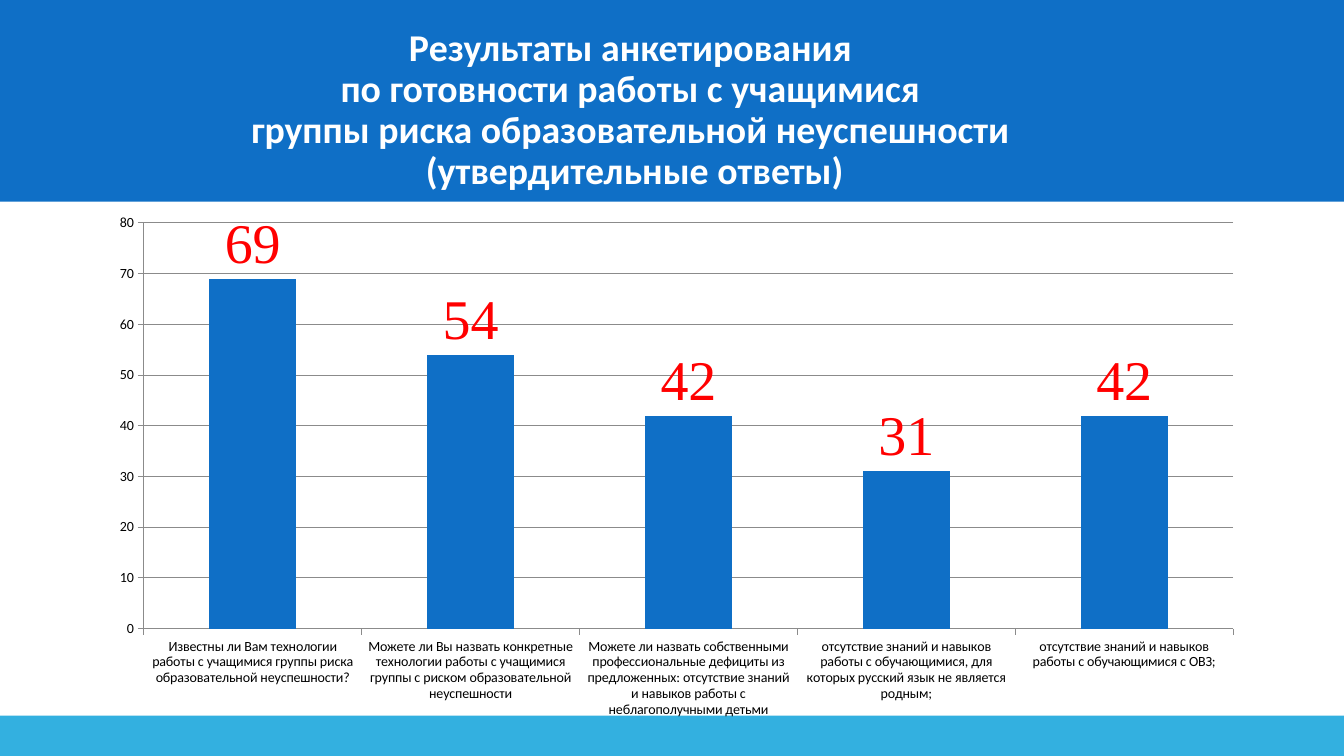
import pptx
import pptx.chart.data
import pptx.dml.color
import pptx.enum.chart
import pptx.enum.shapes
import pptx.enum.text
import pptx.oxml
import pptx.oxml.ns
import pptx.util

PX = 9144  # EMU in one px, 100 px to the inch
BLUE, SKY, GREY = "0F6FC6", "009DD9", "8B8B8B"
WHITE, BLACK, RED = "FFFFFF", "000000", "FF0000"

TITLE = (
    "Результаты анкетирования \v"
    "по готовности работы с учащимися \v"
    "группы риска образовательной неуспешности \v"
    "(утвердительные ответы)"
)
VOTES = {
    "Известны ли Вам технологии работы с учащимися группы риска "
    "образовательной неуспешности?": 69,
    "Можете ли Вы назвать конкретные технологии работы с учащимися "
    "группы с риском образовательной неуспешности": 54,
    "Можете ли назвать собственными профессиональные дефициты из "
    "предложенных: отсутствие знаний и навыков работы с "
    "неблагополучными детьми": 42,
    "отсутствие знаний и навыков работы с обучающимися, для которых "
    "русский язык не является родным;": 31,
    "отсутствие знаний и навыков работы с обучающимися с ОВЗ;": 42,
}


def color(code):
    return pptx.dml.color.RGBColor.from_string(code)


def style(font, size, tint, face="Calibri", bold=False):
    font.size = pptx.util.Pt(size)
    font.name = face
    font.bold = bold
    font.color.rgb = color(tint)


def write(frame, text, space=1.0, **form):
    part = frame.paragraphs[0]
    part.text = text
    part.alignment = pptx.enum.text.PP_ALIGN.CENTER
    part.line_spacing = space
    for run in part.runs:
        style(run.font, **form)


class Page:
    def __init__(self, deck):
        self.slide = deck.slides.add_slide(deck.slide_layouts[6])
        self.shapes = self.slide.shapes

    def band(self, *box, fill, alpha=100):
        kind = pptx.enum.shapes.MSO_SHAPE.RECTANGLE
        band = self.shapes.add_shape(kind, *(n * PX for n in box))
        band.shadow.inherit = False
        band.fill.solid()
        band.fill.fore_color.rgb = color(fill)
        band.line.fill.background()
        if alpha < 100:
            tone = band.fill._xPr.find(".//" + pptx.oxml.ns.qn("a:srgbClr"))
            node = pptx.oxml.parse_xml(
                f'<a:alpha {pptx.oxml.ns.nsdecls("a")} val="{alpha * 1000}"/>'
            )
            tone.append(node)

    def text(self, *box, text, **form):
        frame = self.shapes.add_textbox(*(n * PX for n in box)).text_frame
        frame.word_wrap = True
        frame.vertical_anchor = pptx.enum.text.MSO_ANCHOR.MIDDLE
        write(frame, text, **form)

    def chart(self, *box, data):
        enum = pptx.enum.chart
        feed = pptx.chart.data.CategoryChartData()
        feed.categories = list(data)
        feed.add_series("Series 1", list(data.values()))
        chart = self.shapes.add_chart(
            enum.XL_CHART_TYPE.COLUMN_CLUSTERED, *(n * PX for n in box), feed
        ).chart
        chart.has_legend = False
        chart.has_title = False
        style(chart.font, 10, BLACK)

        # Axes and grid
        for axis in (chart.category_axis, chart.value_axis):
            axis.major_tick_mark = enum.XL_TICK_MARK.OUTSIDE
            axis.format.line.color.rgb = color(GREY)
        scale = chart.value_axis
        scale.minimum_scale, scale.maximum_scale = 0, 80
        scale.major_unit = 10
        scale.has_major_gridlines = True
        scale.major_gridlines.format.line.color.rgb = color(GREY)

        # Bars and their values
        plot = chart.plots[0]
        plot.gap_width = 150
        plot.vary_by_categories = False
        bars = plot.series[0]
        bars.format.fill.solid()
        bars.format.fill.fore_color.rgb = color(BLUE)
        tags = bars.data_labels
        tags.show_value = True
        tags.position = enum.XL_LABEL_POSITION.OUTSIDE_END
        style(tags.font, 40, RED, "Times New Roman")


def main():
    deck = pptx.Presentation()
    deck.slide_width, deck.slide_height = 1333 * PX, 750 * PX
    page = Page(deck)

    # Head and foot bands
    page.band(0, 0, 1333, 200, fill=BLUE)
    page.band(0, 710, 1333, 40, fill=SKY, alpha=80)

    # Title
    page.text(18, 40, 1223, 140, text=TITLE, space=0.9,
              size=27, tint=WHITE, bold=True)

    # Survey results
    page.chart(96, 203, 1150, 519, data=VOTES)

    deck.save("out.pptx")


if __name__ == "__main__":
    main()
